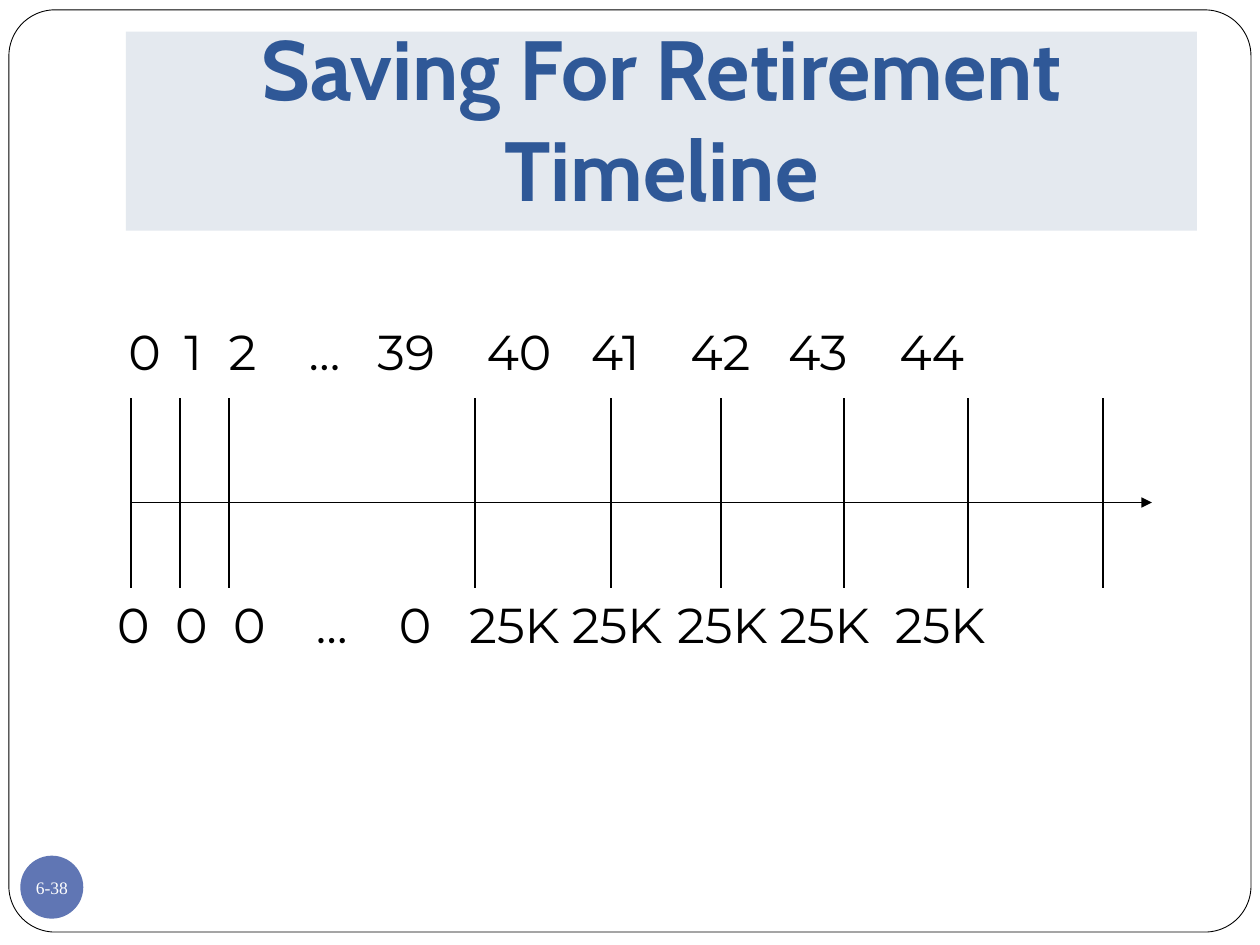
from lxml import etree
from pptx import Presentation
from pptx import util as u
from pptx.dml.color import RGBColor
from pptx.enum import shapes, text
from pptx.oxml import ns

Cm, Pt = u.Cm, u.Pt


def paint(fmt, hue):
    """Give a fill, line or font a solid colour."""
    if hasattr(fmt, "solid"):
        fmt.solid()
        fmt.fore_color.rgb = RGBColor.from_string(hue)
    else:
        fmt.color.rgb = RGBColor.from_string(hue)


def write(box, words, font="Montserrat", size=28, hue="000000", bold=False,
          align="LEFT", anchor="TOP", wrap=True, pads=(0.25, 0.13, 0.25, 0.13),
          tabs=()):
    frame = box.text_frame
    frame.word_wrap = wrap
    frame.vertical_anchor = getattr(text.MSO_ANCHOR, anchor)
    (frame.margin_left, frame.margin_top,
     frame.margin_right, frame.margin_bottom) = map(Cm, pads)
    para = frame.paragraphs[0]
    para.alignment = getattr(text.PP_ALIGN, align)
    run = para.add_run()
    run.text = words
    run.font.name, run.font.size, run.font.bold = font, Pt(size), bold
    paint(run.font, hue)
    # Tab stops hold the labels in columns
    if tabs:
        stops = etree.SubElement(para._p.get_or_add_pPr(), ns.qn("a:tabLst"))
        for pos in tabs:
            etree.SubElement(stops, ns.qn("a:tab"), pos=str(Cm(pos)), algn="l")


deck = Presentation()
deck.slide_width, deck.slide_height = Cm(25.4), Cm(19.05)
slide = deck.slides.add_slide(deck.slide_layouts[6])
tree = slide.shapes

# Frame, page badge and title band
parts = []
for kind, spot, hue in (
    ("ROUNDED_RECTANGLE", (0.18, 0.2, 25.04, 18.59), "FFFFFF"),
    ("OVAL", (0.41, 17.25, 1.27, 1.27), "6076B4"),
    ("RECTANGLE", (2.54, 0.64, 21.59, 4.01), "E4E9EF"),
):
    part = tree.add_shape(getattr(shapes.MSO_SHAPE, kind), *map(Cm, spot))
    part.shadow.inherit = False
    paint(part.fill, hue)
    part.line.fill.background()
    parts.append(part)
frame, badge, band = parts
frame.adjustments[0] = 0.05
paint(frame.line.fill, "000000")
frame.line.width = Pt(0.5)
write(badge, "6-38", font="Times New Roman", size=10, hue="FFFFFF",
      align="CENTER", anchor="MIDDLE", wrap=False, pads=(0, 0, 0, 0))
write(band, "Saving For Retirement Timeline", font="Cabin", size=48,
      hue="2F5897", bold=True, align="CENTER", anchor="BOTTOM",
      pads=(0.25, 0.13, 0.25, 0.25))

# Time axis first, then the year ticks
axis = 10.13
ticks = (2.64, 3.63, 4.62, 9.58, 12.32, 14.53, 17.02, 19.51, 22.23)
ends = [(ticks[0], axis, 23.22, axis)]
ends += [(x, 8.03, x, 11.86) for x in ticks]
for n, spot in enumerate(ends):
    line = tree.add_connector(shapes.MSO_CONNECTOR.STRAIGHT, *map(Cm, spot))
    paint(line.line.fill, "000000")
    line.line.width = Pt(1)
    props = line._element.spPr
    if n == 0:
        etree.SubElement(props.find(ns.qn("a:ln")), ns.qn("a:tailEnd"),
                         type="triangle")
    etree.SubElement(props, ns.qn("a:effectLst"))

# Years above the axis, cash flows below it
rows = (
    ("0 1 2 … 39 40 41 42 43 44", (2.34, 6.35, 21.31, 1.45), 0.25,
     (1.13, 2.02, 3.63, 5.02, 7.22, 9.32, 11.33, 13.3, 15.54)),
    ("0 0 0 … 0 25K 25K 25K 25K 25K", (1.9, 11.86, 21.79, 1.45), 0.46,
     (1.17, 2.34, 4.01, 5.68, 7.1, 9.17, 11.29, 13.35, 15.68)),
)
for words, spot, left, tabs in rows:
    box = tree.add_textbox(*map(Cm, spot))
    write(box, "\t".join(words.split()), tabs=tabs,
          pads=(left, 0.13, 0.25, 0.13))

deck.save("out.pptx")
